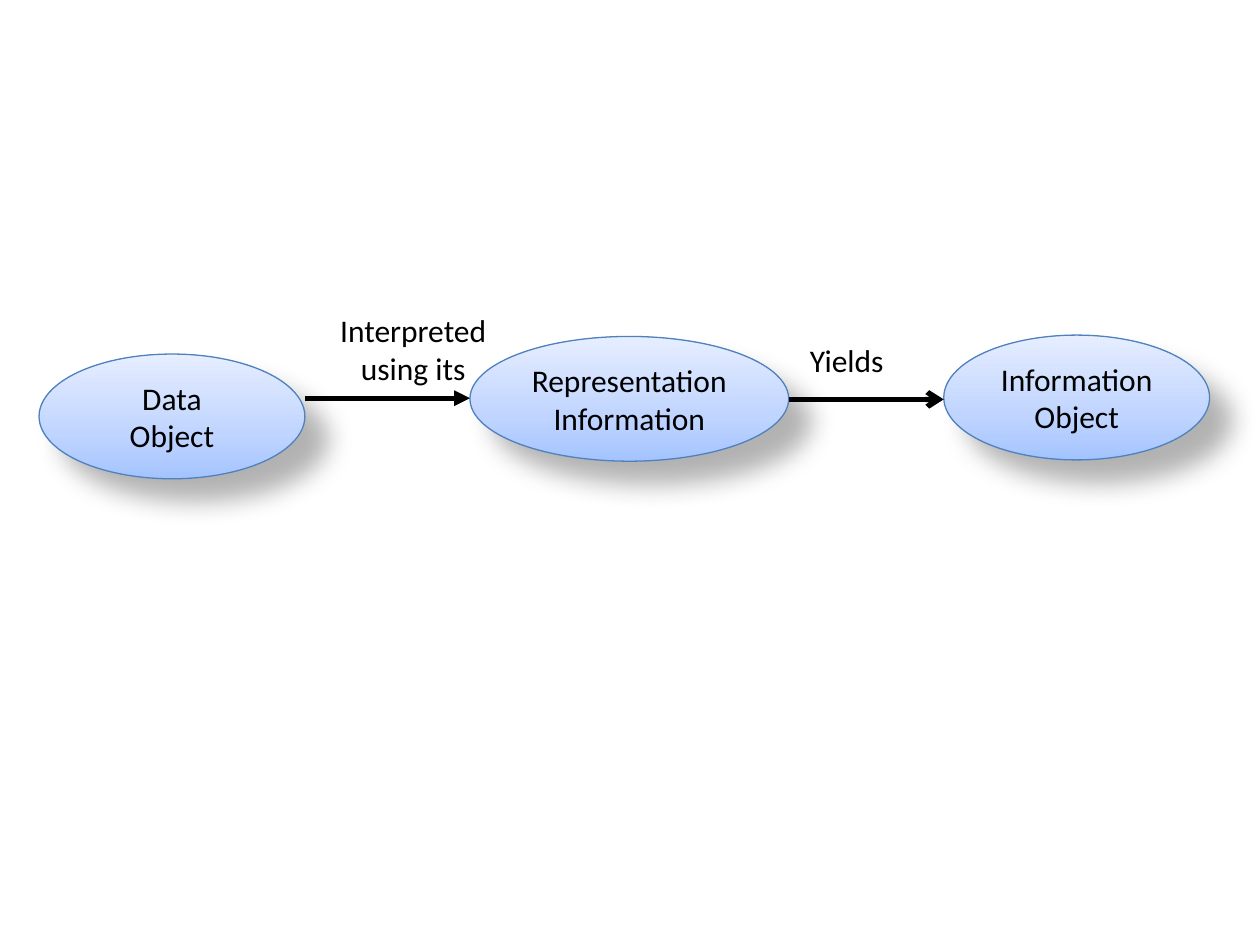
from copy import deepcopy

from lxml.etree import SubElement
from pptx import Presentation
from pptx.dml.color import RGBColor
from pptx.enum.shapes import MSO_CONNECTOR, MSO_SHAPE
from pptx.enum.text import MSO_ANCHOR, MSO_AUTO_SIZE, PP_ALIGN
from pptx.oxml.ns import qn
from pptx.util import Inches, Pt

COLORS = {
    "text": "000000",
    "arrow": "000000",
    "shadow": "000000",
    "outline": "4F81BD",
    "bottom": "A4C4FF",
    "middle": "BFD4FF",
    "top": "E6EEFF",
}
GRADIENT = [(0, "bottom"), (0.35, "middle"), (1, "top")]
FONT = "Calibri"


def rgb(name):
    return RGBColor.from_string(COLORS[name])


def write_text(sp, lines):
    tf = sp.text_frame
    tf.word_wrap = True
    tf.auto_size = MSO_AUTO_SIZE.SHAPE_TO_FIT_TEXT
    tf.text = "\n".join(lines)
    for p in tf.paragraphs:
        p.alignment = PP_ALIGN.CENTER
        p.font.name = FONT
        p.font.size = Pt(18)
        p.font.color.rgb = rgb("text")


def fill_gradient(sp):
    sp.fill.gradient()
    sp.fill.gradient_angle = 90
    stops = sp._element.spPr.find(".//" + qn("a:gsLst"))
    stops.append(deepcopy(stops[0]))
    for stop, (position, color) in zip(sp.fill.gradient_stops, GRADIENT):
        stop.position = position
        stop.color.rgb = rgb(color)


def add_shadow(sp):
    sp.shadow.inherit = False
    effects = sp._element.spPr.find(qn("a:effectLst"))
    shadow = SubElement(effects, qn("a:outerShdw"), blurRad=str(Pt(15)),
                        dist=str(Pt(18)), dir="2700000", algn="tl",
                        rotWithShape="0")
    color = SubElement(shadow, qn("a:srgbClr"), val=COLORS["shadow"])
    SubElement(color, qn("a:alpha"), val="30000")


def add_ellipse(slide, left, top, width, lines):
    sp = slide.shapes.add_shape(MSO_SHAPE.OVAL, Inches(left), Inches(top),
                                Inches(width), Inches(0.99))
    fill_gradient(sp)
    sp.line.color.rgb = rgb("outline")
    sp.line.width = Pt(0.75)
    add_shadow(sp)
    write_text(sp, lines)
    sp.text_frame.vertical_anchor = MSO_ANCHOR.MIDDLE


def add_arrow(slide, start, end, y, head):
    line = slide.shapes.add_connector(MSO_CONNECTOR.STRAIGHT, Inches(start),
                                      Inches(y), Inches(end), Inches(y))
    line.line.color.rgb = rgb("arrow")
    line.line.width = Pt(3)
    SubElement(line.line._get_or_add_ln(), qn("a:tailEnd"), type=head)
    SubElement(line._element.spPr, qn("a:effectLst"))


def add_label(slide, left, top, width, height, lines):
    box = slide.shapes.add_textbox(Inches(left), Inches(top),
                                   Inches(width), Inches(height))
    write_text(box, lines)


def main():
    prs = Presentation()
    prs.slide_width, prs.slide_height = Inches(10), Inches(7.5)
    slide = prs.slides.add_slide(prs.slide_layouts[6])

    add_ellipse(slide, 3.73, 2.67, 2.53, ["Representation", "Information"])
    add_ellipse(slide, 0.31, 2.81, 2.11, ["Data", "Object"])
    add_ellipse(slide, 7.49, 2.66, 2.11, ["Information Object"])
    add_arrow(slide, 2.42, 3.73, 3.16, "triangle")
    add_arrow(slide, 6.26, 7.49, 3.17, "arrow")
    add_label(slide, 2.5, 2.42, 1.56, 0.71, ["Interpreted", "using its"])
    add_label(slide, 6.25, 2.66, 0.94, 0.4, ["Yields"])

    prs.save("out.pptx")


if __name__ == "__main__":
    main()
